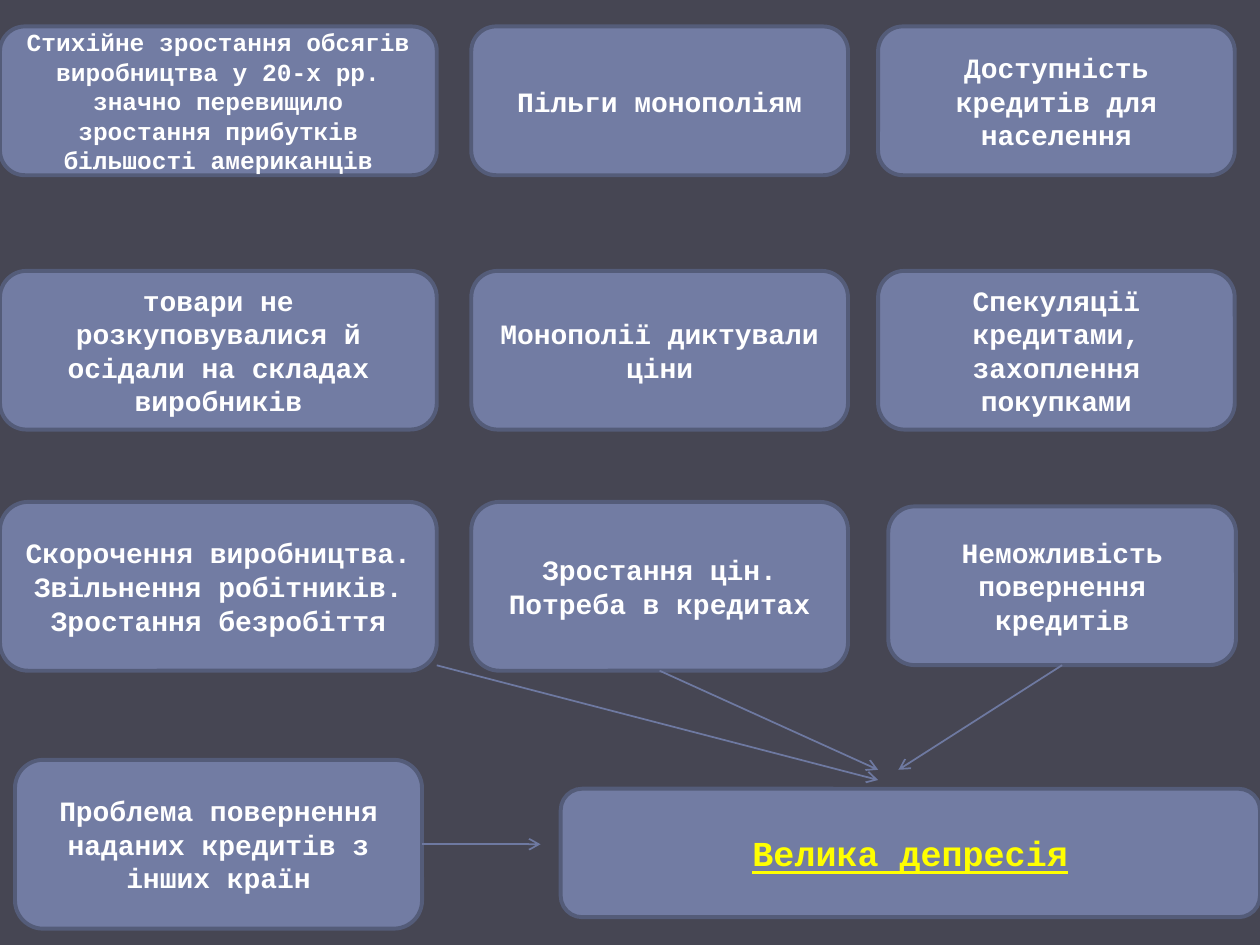
from dataclasses import dataclass

from lxml.etree import SubElement
from pptx import Presentation
from pptx.dml.color import RGBColor
from pptx.enum.shapes import MSO_CONNECTOR as Connector, MSO_SHAPE as Shape
from pptx.enum.text import MSO_ANCHOR as Anchor, PP_ALIGN as Align
from pptx.oxml.ns import qn
from pptx.util import Pt


@dataclass(frozen=True)
class Theme:
    """Colours, type and line widths of the slide."""
    background: str = "464653"
    card: str = "727CA3"
    border: str = "545C79"
    arrow: str = "6E79A1"
    text: str = "FFFFFF"
    accent: str = "FFFF00"
    font: str = "Courier New"
    small: float = 14
    body: float = 16
    large: float = 20
    border_width: float = 2.25
    arrow_width: float = 1


@dataclass(frozen=True)
class Box:
    """A rectangle in points."""
    left: float
    top: float
    width: float
    height: float


THEME = Theme()
BOTTOM, RIGHT = 2, 3

COLUMNS = [(0, 249.6), (269.3, 215.3), (501.8, 203.8)]
ROWS = [(0, 85), (139.7, 90.7), (271.7, 96.5)]
CAUSES = [
    ["Стихійне зростання обсягів виробництва у 20-х рр. значно перевищило "
     "зростання прибутків більшості американців",
     "Пільги монополіям",
     "Доступність кредитів для населення"],
    ["товари не розкуповувалися й осідали на складах виробників",
     "Монополії диктували ціни",
     "Спекуляції кредитами, захоплення покупками"],
    ["Скорочення виробництва. Звільнення робітників. Зростання безробіття",
     "Зростання цін. Потреба в кредитах",
     "Неможливість повернення кредитів"],
]
FOREIGN_CREDITS = "Проблема повернення наданих кредитів з інших країн"
DEPRESSION = "Велика депресія"


def rgb(value):
    """Turn a hex string into a colour."""
    return RGBColor.from_string(value)


def add_card(slide, box, text, size=THEME.body, color=THEME.text, underline=None):
    """Place one rounded card with centred bold text."""
    card = slide.shapes.add_shape(
        Shape.ROUNDED_RECTANGLE,
        Pt(box.left), Pt(box.top), Pt(box.width), Pt(box.height))
    card.shadow.inherit = False
    card.fill.solid()
    card.fill.fore_color.rgb = rgb(THEME.card)
    card.line.color.rgb = rgb(THEME.border)
    card.line.width = Pt(THEME.border_width)
    frame = card.text_frame
    frame.word_wrap = True
    frame.vertical_anchor = Anchor.MIDDLE
    frame.text = text
    paragraph = frame.paragraphs[0]
    paragraph.alignment = Align.CENTER
    font = paragraph.runs[0].font
    font.name, font.size, font.bold = THEME.font, Pt(size), True
    font.underline = underline
    font.color.rgb = rgb(color)
    return card


def add_arrow(slide, start, end, source=None, site=BOTTOM):
    """Draw a thin arrow, glued to the source card when one is given."""
    arrow = slide.shapes.add_connector(
        Connector.STRAIGHT, *(Pt(value) for value in (*start, *end)))
    if source is not None:
        arrow.begin_connect(source, site)
    arrow.line.color.rgb = rgb(THEME.arrow)
    arrow.line.width = Pt(THEME.arrow_width)
    properties = arrow._element.spPr
    SubElement(properties.find(qn("a:ln")), qn("a:tailEnd"), type="arrow")
    SubElement(properties, qn("a:effectLst"))


def add_causes(slide, box):
    """Fill the grid of causes and return its last row of cards."""
    for row, ((top, height), texts) in enumerate(zip(ROWS, CAUSES)):
        cards = []
        for column, ((left, width), text) in enumerate(zip(COLUMNS, texts)):
            place = Box(box.left + left, box.top + top, width, height)
            if row == column == 2:
                place = Box(place.left + 5.8, place.top + 2.6, 198.7, 90.7)
            size = THEME.small if row == column == 0 else THEME.body
            cards.append(add_card(slide, place, text, size))
    return cards


def add_outcome(slide, box, causes):
    """Place the foreign credits, the depression and the arrows towards it."""
    credits_box = Box(box.left, box.top, 232.6, 96.5)
    depression_left = box.left + 311.8
    foreign = add_card(slide, credits_box, FOREIGN_CREDITS)
    add_card(slide,
             Box(depression_left, box.top + 16.5, box.width - 311.8, 73.4),
             DEPRESSION, THEME.large, THEME.accent, True)

    prices, borrowers = causes[1:]
    target, tip = box.left + 493.2, box.top + 5.7
    corner = box.left + 241, box.top - 54
    add_arrow(slide, corner, (target, tip + 5.8))
    add_arrow(slide, corner, (target, tip), prices)
    add_arrow(slide, corner, (target + 11.6, tip), borrowers)
    middle = credits_box.top + credits_box.height / 2
    add_arrow(slide, (credits_box.left, middle),
              (depression_left - 11.5, middle), foreign, RIGHT)


def main():
    """Build and save the slide."""
    deck = Presentation()
    deck.slide_width, deck.slide_height = Pt(720), Pt(540)
    slide = deck.slides.add_slide(deck.slide_layouts[6])
    slide.background.fill.solid()
    slide.background.fill.fore_color.rgb = rgb(THEME.background)
    causes = add_causes(slide, Box(0, 15.1, 705.6, 368.2))
    add_outcome(slide, Box(8.6, 434.2, 711.4, 96.5), causes)
    deck.save("out.pptx")


if __name__ == "__main__":
    main()
